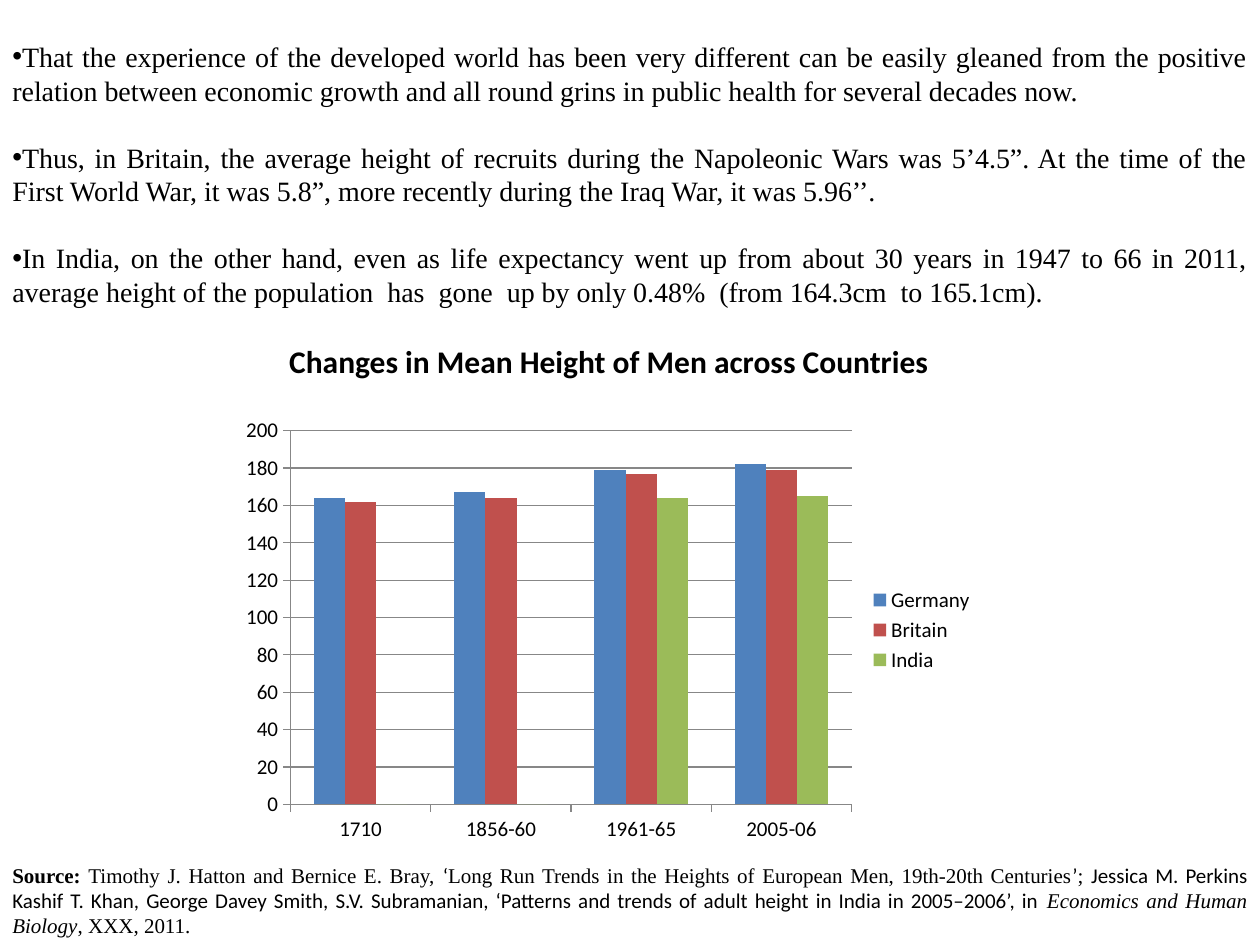
from lxml import etree
from pptx import Presentation
from pptx.chart.data import CategoryChartData
from pptx.dml.color import RGBColor
from pptx.enum.chart import XL_CHART_TYPE, XL_LEGEND_POSITION, XL_TICK_MARK
from pptx.enum.text import MSO_ANCHOR, PP_ALIGN
from pptx.oxml.ns import qn
from pptx.util import Pt

COLUMNS = XL_CHART_TYPE.COLUMN_CLUSTERED
LEGEND_RIGHT = XL_LEGEND_POSITION.RIGHT
TICK_OUT = XL_TICK_MARK.OUTSIDE
TOP, MIDDLE = MSO_ANCHOR.TOP, MSO_ANCHOR.MIDDLE
CENTER, JUSTIFY = PP_ALIGN.CENTER, PP_ALIGN.JUSTIFY
SERIF, SANS = "Times New Roman", "Calibri"
BLACK, GRAY = "000000", "878787"


def rgb(color):
    return RGBColor.from_string(color)


def add_text_frame(left, top, width, height, anchor):
    """Add a wrapping text box and return its text frame."""
    tf = s.shapes.add_textbox(Pt(left), Pt(top), Pt(width), Pt(height)).text_frame
    tf.word_wrap = True
    tf.vertical_anchor = anchor
    return tf


prs = Presentation()
prs.slide_width, prs.slide_height = Pt(720), Pt(540)
s = prs.slides.add_slide(prs.slide_layouts[5])

# Bulleted findings
findings = [
    "That the experience of the developed world has been very different can be easily "
    "gleaned from the positive relation between economic growth and all round grins in "
    "public health for several decades now. ",
    "Thus, in Britain, the average height of recruits during the Napoleonic Wars was "
    "5’4.5”. At the time of the First World War, it was 5.8”, more recently during the "
    "Iraq War, it was 5.96’’.",
    "In India, on the other hand, even as life expectancy went up from about 30 years in "
    "1947 to 66 in 2011, average height of the population  has  gone  up by only 0.48%  "
    "(from 164.3cm  to 165.1cm).",
]
tf = add_text_frame(0, 18, 720, 162.7, MIDDLE)
for i, finding in enumerate(findings):
    p = tf.paragraphs[0] if i == 0 else tf.add_paragraph()
    p.text = finding
    p.alignment = JUSTIFY
    p.line_spacing = Pt(19.2)
    p.space_before = Pt(19.2 if i else 0)
    p.font.name, p.font.size = SERIF, Pt(16)
    p.font.color.rgb = rgb(BLACK)
    pPr = p._p.get_or_add_pPr()
    bullet_font = etree.Element(qn("a:buFont"), typeface="Arial")
    bullet = etree.Element(qn("a:buChar"), char="•")
    default_run = pPr.find(qn("a:defRPr"))
    default_run.addprevious(bullet_font)
    default_run.addprevious(bullet)

# Chart of mean heights in centimetres
data = CategoryChartData()
data.categories = ["1710", "1856-60", "1961-65", "2005-06"]
heights = [
    ("Germany", (164, 167, 179, 182), "4F81BD"),
    ("Britain", (162, 164, 177, 179), "C0504D"),
    ("India", (0, 0, 164, 165), "9BBB59"),
]
for country, values, _ in heights:
    data.add_series(country, values)
chart = s.shapes.add_chart(COLUMNS, Pt(132), Pt(234), Pt(432), Pt(252), data).chart
chart.has_title = False
chart.font.name, chart.font.size = SANS, Pt(12)
chart.font.color.rgb = rgb(BLACK)
chart.has_legend = True
chart.legend.position = LEGEND_RIGHT
chart.legend.include_in_layout = False

plot = chart.plots[0]
plot.vary_by_categories = False
plot.gap_width, plot.overlap = 150, 0
for series, (_, _, color) in zip(plot.series, heights):
    series.format.fill.solid()
    series.format.fill.fore_color.rgb = rgb(color)

for axis in (chart.category_axis, chart.value_axis):
    axis.major_tick_mark = TICK_OUT
    axis.format.line.color.rgb = rgb(GRAY)
    axis.format.line.width = Pt(0.75)
value_axis = chart.value_axis
value_axis.minimum_scale, value_axis.maximum_scale = 0, 200
value_axis.major_unit = 20
value_axis.has_major_gridlines = True
value_axis.major_gridlines.format.line.color.rgb = rgb(GRAY)
value_axis.major_gridlines.format.line.width = Pt(0.75)

# Heading above the chart
title = s.shapes.title
title.left, title.top, title.width, title.height = Pt(120), Pt(192), Pt(456), Pt(29)
tf = title.text_frame
tf.word_wrap = True
tf.vertical_anchor = TOP
p = tf.paragraphs[0]
p.text = "Changes in Mean Height of Men across Countries"
p.alignment = CENTER
p.font.name, p.font.size, p.font.bold = SANS, Pt(18), True
p.font.color.rgb = rgb(BLACK)

# Source note: text, font, bold, italic
source = [
    ("Source: ", SERIF, True, False),
    ("Timothy J. Hatton and Bernice E. Bray, ", SERIF, False, False),
    ("‘", SANS, False, False),
    ("Long Run Trends in the Heights of European Men, 19th-20th Centuries",
     SERIF, False, False),
    ("’", SANS, False, False),
    ("; ", SERIF, False, False),
    ("Jessica M. Perkins Kashif T. Khan, George Davey Smith, S.V. Subramanian, ‘Patterns "
     "and trends of adult height in India in 2005–2006’, in ", SANS, False, False),
    ("Economics and Human Biology", SERIF, False, True),
    (", XXX, 2011. ", SERIF, False, False),
]
p = add_text_frame(0, 489, 720, 51, MIDDLE).paragraphs[0]
p.alignment = JUSTIFY
for text, font, bold, italic in source:
    r = p.add_run()
    r.text = text
    r.font.name, r.font.size = font, Pt(12)
    r.font.bold, r.font.italic = bold, italic
    r.font.color.rgb = rgb(BLACK)

prs.save("out.pptx")
